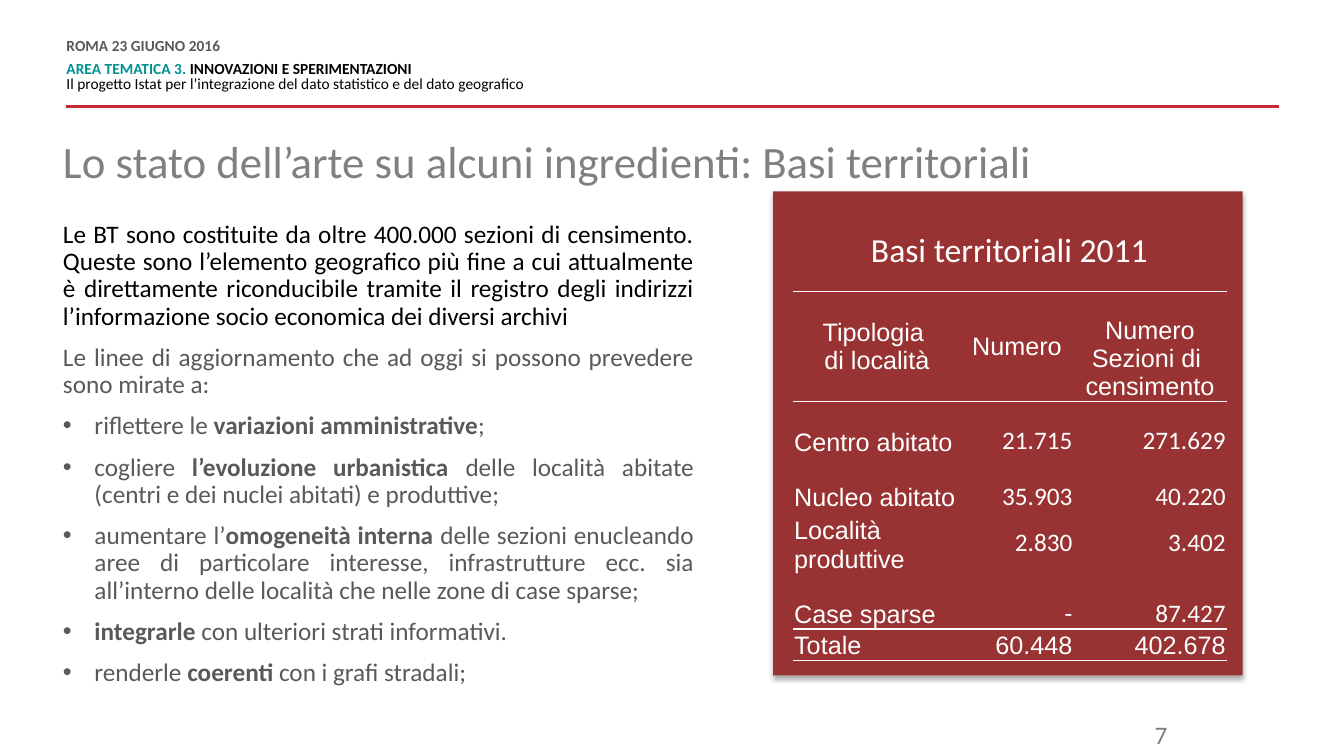
import pptx
import pptx.dml.color
import pptx.enum.shapes
import pptx.enum.text
import pptx.oxml
import pptx.oxml.ns
import pptx.util

Pt = pptx.util.Pt
Align = pptx.enum.text.PP_ALIGN
Anchor = pptx.enum.text.MSO_ANCHOR

WHITE, BLACK, GREY, MIDGREY = "FFFFFF", "000000", "595959", "7F7F7F"
TEAL, RED, BRICK = "009190", "C72A31", "993333"


def color(value):
    return pptx.dml.color.RGBColor.from_string(value)


def add_xml(parent, body):
    tag, rest = body.split(" ", 1)
    parent.append(pptx.oxml.parse_xml(f"<{tag} {pptx.oxml.ns.nsdecls('a')} {rest}"))


class SlideBuilder:
    font = "Calibri"

    def __init__(self, page):
        self.page = page

    def line(self, start, end, tint, width):
        rule = self.page.shapes.add_connector(
            pptx.enum.shapes.MSO_CONNECTOR.STRAIGHT, *map(Pt, start + end))
        rule.line.color.rgb = color(tint)
        rule.line.width = Pt(width)
        add_xml(rule._element.spPr, "a:effectLst />")

    def panel(self, place, fill):
        box = self.page.shapes.add_shape(
            pptx.enum.shapes.MSO_SHAPE.RECTANGLE, *map(Pt, place))
        box.fill.solid()
        box.fill.fore_color.rgb = color(fill)
        box.line.fill.background()
        box.shadow.inherit = False
        effects = box._element.spPr.find(pptx.oxml.ns.qn("a:effectLst"))
        add_xml(effects, 'a:outerShdw blurRad="44450" dist="27940" dir="5400000" algn="ctr" '
                'rotWithShape="0"><a:srgbClr val="000000"><a:alpha val="32000"/>'
                '</a:srgbClr></a:outerShdw>')

    def textbox(self, place, inset=True, anchor=Anchor.TOP):
        frame = self.page.shapes.add_textbox(*map(Pt, place)).text_frame
        frame.word_wrap = True
        frame.vertical_anchor = anchor
        if not inset:
            frame.margin_left = frame.margin_right = 0
            frame.margin_top = frame.margin_bottom = 0
        return frame

    def paragraph(self, frame, spans, size, tint, align=Align.LEFT, spacing=None,
                  before=0, bullet=False, bold=None, font=None):
        first = not frame.paragraphs[0].runs
        para = frame.paragraphs[0] if first else frame.add_paragraph()
        para.alignment = align
        if spacing:
            para.line_spacing = spacing
        if before and not first:
            para.space_before = Pt(before)
        if bullet:
            properties = para._p.get_or_add_pPr()
            properties.set("marL", str(Pt(22.5)))
            properties.set("indent", str(-Pt(22.5)))
            add_xml(properties, 'a:buFont typeface="Arial"/>')
            add_xml(properties, 'a:buChar char="•"/>')
        para.font.name = font or self.font
        para.font.size = Pt(size)
        para.font.bold = bold
        para.font.color.rgb = color(tint)
        for index, text in enumerate(spans):
            if text:
                span = para.add_run()
                span.text = text
                if index % 2:
                    span.font.bold = True
        return para

    def border(self, cell, side, visible):
        fill = (f'<a:solidFill><a:srgbClr val="{WHITE}"/></a:solidFill>'
                if visible else "<a:noFill/>")
        add_xml(cell._tc.get_or_add_tcPr(), f'a:ln{side} w="12700">{fill}</a:ln{side}>')

    def table(self, place, widths, heights, rows):
        grid = self.page.shapes.add_table(
            len(rows), len(widths), *map(Pt, place)).table
        grid.first_row = grid.horz_banding = False
        for column, width in zip(grid.columns, widths):
            column.width = Pt(width)
        for row, height in zip(grid.rows, heights):
            row.height = Pt(height)
        last = len(rows) - 1
        for row, texts in enumerate(rows):
            for column, text in enumerate(texts):
                cell = grid.cell(row, column)
                for side, visible in zip("LRTB", (False, False, row in (0, 1, last),
                                                  row in (0, last - 1, last))):
                    self.border(cell, side, visible)
                cell.fill.background()
                cell.margin_left = cell.margin_right = cell.margin_top = Pt(0.7)
                cell.margin_bottom = 0
                middle = column < 2 if row == 0 else row == 3 and column > 0
                cell.vertical_anchor = Anchor.MIDDLE if middle else Anchor.BOTTOM
                align = (Align.CENTER if row == 0 else
                         Align.RIGHT if column else Align.LEFT)
                font = self.font if column and 0 < row < last else "Arial"
                for part in text.split("\n"):
                    self.paragraph(cell.text_frame, [part], 18, WHITE, align, font=font)


def main():
    deck = pptx.Presentation()
    deck.slide_width, deck.slide_height = Pt(960), Pt(540)
    builder = SlideBuilder(deck.slides.add_slide(deck.slide_layouts[6]))

    builder.line((913.7, 76.3), (47.5, 76.3), RED, 2)

    header = builder.textbox((47.5, 28.1, 600.5, 50.4), inset=False)
    date = builder.paragraph(header, ["ROMA 23 GIUGNO 2016"], 11, GREY,
                             spacing=Pt(10.8), bold=True)
    date.space_after = Pt(6)
    area = builder.paragraph(header, ["AREA TEMATICA 3. ", "INNOVAZIONI E SPERIMENTAZIONI"],
                             11, BLACK, spacing=Pt(10.8), bold=True)
    area.runs[0].font.color.rgb = color(TEAL)
    builder.paragraph(
        header,
        ["Il progetto Istat per l’integrazione del dato statistico e del dato geografico"],
        11, BLACK, spacing=Pt(10.8))

    number = builder.textbox((756, 510.5, 85, 25.2))
    builder.paragraph(number, ["7"], 18, MIDGREY, Align.RIGHT)

    body = builder.textbox((45, 158.4, 450.7, 351.4), inset=False)
    intro = [
        ("Le BT sono costituite da oltre 400.000 sezioni di censimento. Queste sono "
         "l’elemento geografico più fine a cui attualmente è direttamente riconducibile "
         "tramite il registro degli indirizzi l’informazione socio economica dei diversi "
         "archivi", BLACK),
        ("Le linee di aggiornamento che ad oggi si possono prevedere sono mirate a:", GREY),
    ]
    for text, tint in intro:
        builder.paragraph(body, [text], 18, tint, Align.JUSTIFY, 0.9, 10)
    goals = [
        ("riflettere le ", "variazioni amministrative", "; "),
        ("cogliere ", "l’evoluzione urbanistica ",
         "delle località abitate (centri e dei nuclei abitati) e produttive;"),
        ("aumentare l’", "omogeneità interna",
         " delle sezioni enucleando aree di particolare interesse, infrastrutture ecc. "
         "sia all’interno delle località che nelle zone di case sparse;"),
        ("", "integrarle ", "con ulteriori strati informativi. "),
        ("renderle ", "coerenti", " con i grafi stradali;"),
    ]
    for spans in goals:
        builder.paragraph(body, spans, 18, GREY, Align.JUSTIFY, 0.9, 10, bullet=True)

    title = builder.textbox((45, 100.1, 842.4, 58.3), inset=False)
    builder.paragraph(title, ["Lo stato dell’arte su alcuni ingredienti: Basi territoriali"],
                      32, "808080", spacing=0.9)

    builder.panel((552.2, 136.8, 335.5, 345.6), BRICK)
    builder.table(
        (566.6, 208.1, 309.6, 257), (119.5, 80.6, 109.5),
        (78.5, 39.6, 39.6, 39.6, 39.6, 20.2),
        [("Tipologia \ndi località", "Numero", "Numero\nSezioni di \ncensimento"),
         ("Centro abitato", "21.715", "271.629"),
         ("Nucleo abitato", "35.903", "40.220"),
         ("Località produttive", "2.830", "3.402"),
         ("Case sparse", "-", "87.427"),
         ("Totale", "60.448", "402.678")])
    caption = builder.textbox((552.2, 159.8, 337.7, 36), anchor=Anchor.BOTTOM)
    builder.paragraph(caption, ["Basi territoriali 2011"], 24, WHITE, Align.CENTER)

    deck.save("out.pptx")


if __name__ == "__main__":
    main()
